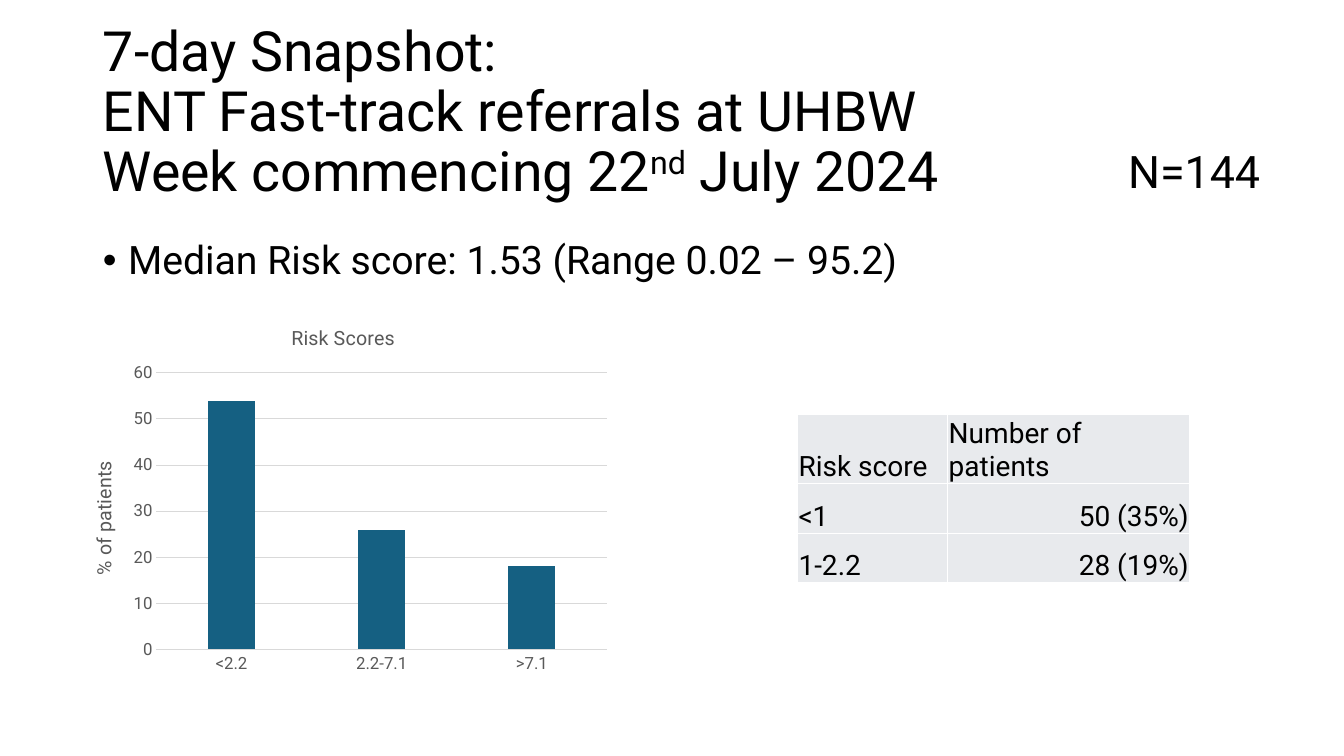
from lxml.etree import SubElement
from pptx import Presentation
from pptx.chart.data import CategoryChartData
from pptx.dml.color import RGBColor
from pptx.enum.chart import XL_CHART_TYPE, XL_TICK_MARK
from pptx.enum.text import MSO_ANCHOR, MSO_AUTO_SIZE, PP_ALIGN
from pptx.oxml import parse_xml
from pptx.oxml.ns import nsdecls, qn
from pptx.util import Inches, Pt

COLORS = {name: RGBColor.from_string(value) for name, value in {
    "text": "000000", "label": "595959", "grid": "D9D9D9",
    "bar": "156082", "cell": "E8EAED"}.items()}


def set_font(font, size, color="text"):
    font.name = "Roboto"
    font.size = Pt(size)
    font.bold = False
    font.color.rgb = COLORS[color]


def move(shape, left, top, width, height):
    shape.left, shape.top = Inches(left), Inches(top)
    shape.width, shape.height = Inches(width), Inches(height)


deck = Presentation()
deck.slide_width, deck.slide_height = Inches(13.33), Inches(7.5)
page = deck.slides.add_slide(deck.slide_layouts[1])

# Title
title = page.shapes.title
move(title, 0.92, 0.4, 11.5, 1.45)
title.text_frame.auto_size = MSO_AUTO_SIZE.NONE
title.text_frame.vertical_anchor = MSO_ANCHOR.MIDDLE
para = title.text_frame.paragraphs[0]
para.text = "7-day Snapshot:\vENT Fast-track referrals at UHBW\vWeek commencing 22"
para.alignment = PP_ALIGN.LEFT
para.line_spacing = 0.9
ordinal = para.add_run()
ordinal.text = "nd"
para.add_run().text = " July 2024"
for span in para.runs:
    set_font(span.font, 39.6)
ordinal.font._element.set("baseline", "30000")

# Bullet
body = page.placeholders[1]
move(body, 0.92, 2.34, 11.5, 4.41)
body.text_frame.auto_size = MSO_AUTO_SIZE.NONE
para = body.text_frame.paragraphs[0]
para.text = "Median Risk score: 1.53 (Range 0.02 – 95.2)"
para.line_spacing = 0.9
para.space_before = Pt(10)
properties = para._p.get_or_add_pPr()
properties.set("marL", str(Inches(0.25)))
properties.set("indent", str(Inches(-0.25)))
SubElement(properties, qn("a:buFont"), typeface="Arial")
SubElement(properties, qn("a:buChar"), char="•")
set_font(para.runs[0].font, 28)

# Column chart
data = CategoryChartData()
data.categories = ["<2.2", "2.2-7.1", ">7.1"]
data.add_series("Series 1", [54, 26, 18])
chart = page.shapes.add_chart(
    XL_CHART_TYPE.COLUMN_CLUSTERED, Inches(0.68), Inches(3.05),
    Inches(5.45), Inches(3.71), data).chart
set_font(chart.font, 10)
chart.has_legend = False
plot = chart.plots[0]
plot.gap_width, plot.overlap = 219, -27
plot.vary_by_categories = False
bars = plot.series[0].format.fill
bars.solid()
bars.fore_color.rgb = COLORS["bar"]

category_axis, value_axis = chart.category_axis, chart.value_axis
for axis in (category_axis, value_axis):
    axis.major_tick_mark = axis.minor_tick_mark = XL_TICK_MARK.NONE
    set_font(axis.tick_labels.font, 12, "label")
value_axis.minimum_scale, value_axis.maximum_scale = 0, 60
value_axis.major_unit = 10
value_axis.format.line.fill.background()
for line in (category_axis.format.line, value_axis.major_gridlines.format.line):
    line.color.rgb = COLORS["grid"]
    line.width = Pt(0.75)

for owner, words in ((chart, "Risk Scores"), (value_axis, "% of patients")):
    owner.has_title = True
    heading = owner.chart_title if owner is chart else owner.axis_title
    heading.text_frame.text = words
    set_font(heading.text_frame.paragraphs[0].runs[0].font, 14, "label")
chart.chart_title.include_in_layout = False

# Fixed plot area inside the chart frame
plot_area = plot._element.getparent()
for old_layout in plot_area.findall(qn("c:layout")):
    plot_area.remove(old_layout)
plot_area.insert(0, parse_xml(
    f'<c:layout {nsdecls("c")}><c:manualLayout><c:layoutTarget val="inner"/>'
    '<c:xMode val="edge"/><c:yMode val="edge"/><c:x val="0.16"/><c:y val="0.175"/>'
    '<c:w val="0.82"/><c:h val="0.74"/></c:manualLayout></c:layout>'))

# Risk score table
rows = [("Risk score", "Number of patients"), ("<1", "50 (35%)"), ("1-2.2", "28 (19%)")]
table = page.shapes.add_table(
    3, 2, Inches(7.91), Inches(4.11), Inches(3.89), Inches(1.67)).table
for column, width in zip(table.columns, (1.49, 2.4)):
    column.width = Inches(width)
for row, height in zip(table.rows, (0.69, 0.49, 0.49)):
    row.height = Inches(height)
for row_index, row in enumerate(rows):
    for column_index, words in enumerate(row):
        cell = table.cell(row_index, column_index)
        cell.text_frame.text = words
        cell.vertical_anchor = MSO_ANCHOR.BOTTOM
        cell.margin_left = cell.margin_right = cell.margin_top = Inches(0.01)
        cell.margin_bottom = 0
        para = cell.text_frame.paragraphs[0]
        para.alignment = PP_ALIGN.RIGHT if row_index and column_index else PP_ALIGN.LEFT
        set_font(para.runs[0].font, 20)
        for side in ("lnL", "lnR", "lnT", "lnB"):
            cell._tc.get_or_add_tcPr().append(parse_xml(
                f'<a:{side} {nsdecls("a")} w="12700"><a:solidFill>'
                f'<a:srgbClr val="FFFFFF"/></a:solidFill></a:{side}>'))
        cell.fill.solid()
        cell.fill.fore_color.rgb = COLORS["cell"]

# Sample size
sample = page.shapes.add_textbox(Inches(11.09), Inches(1.38), Inches(1.77), Inches(0.64))
sample.text_frame.word_wrap = True
sample.text_frame.auto_size = MSO_AUTO_SIZE.SHAPE_TO_FIT_TEXT
sample.text_frame.text = "N=144"
set_font(sample.text_frame.paragraphs[0].runs[0].font, 32)

deck.save("out.pptx")
